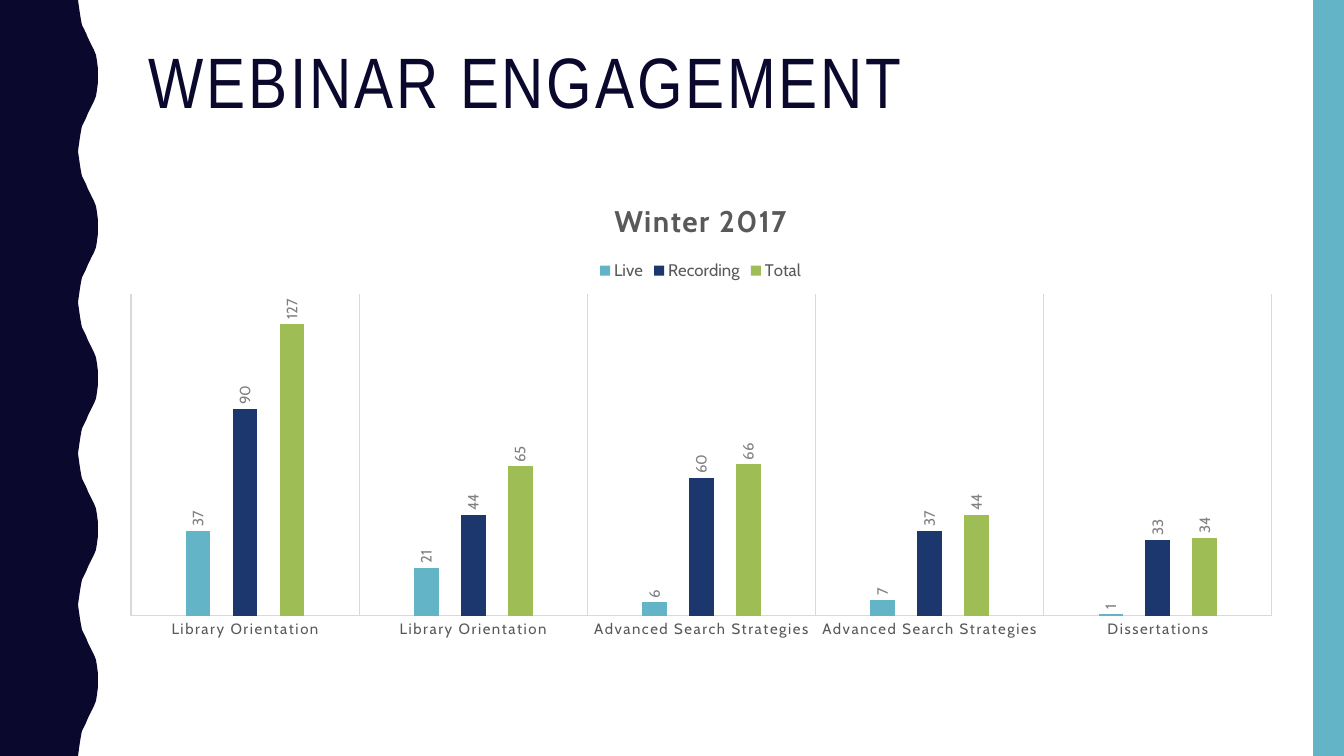
"""Build the webinar engagement slide with its clustered column chart."""
from lxml.etree import SubElement
from pptx import Presentation
from pptx.chart.data import CategoryChartData
from pptx.dml.color import RGBColor
from pptx.enum.chart import XL_CHART_TYPE, XL_LABEL_POSITION, XL_LEGEND_POSITION, XL_TICK_MARK
from pptx.enum.shapes import MSO_SHAPE
from pptx.enum.text import MSO_ANCHOR
from pptx.oxml.ns import qn
from pptx.util import Pt

NAVY = RGBColor(0x0B, 0x08, 0x2E)
TEAL = RGBColor(0x62, 0xB4, 0xC6)
BLUE = RGBColor(0x1B, 0x37, 0x6E)
GREEN = RGBColor(0x9E, 0xBE, 0x55)
DARK_GREY = RGBColor(0x59, 0x59, 0x59)
MID_GREY = RGBColor(0x80, 0x80, 0x80)
LIGHT_GREY = RGBColor(0xD9, 0xD9, 0xD9)

TITLE = "WEBINAR ENGAGEMENT"
CHART_TITLE = "Winter 2017"
WEBINARS = ["Library Orientation", "Library Orientation", "Advanced Search Strategies",
            "Advanced Search Strategies", "Dissertations"]
VIEWS = [
    ("Live", (37, 21, 6, 7, 1), TEAL),
    ("Recording", (90, 44, 60, 37, 33), BLUE),
    ("Total", (127, 65, 66, 44, 34), GREEN),
]

WIDTH, HEIGHT = 1344, 756
SCALE = 12192000 / WIDTH
TITLE_BOX = (139, 42, 1122, 164)
STRIPE_BOX = (1313, 0, 31, HEIGHT)
CHART_BOX = (107, 181, 1187, 468)
PLOT_BOX = (131, 294, 1141, 322)
WAVE_COUNT = 5
HALF_WAVE = [(78, 0), (79, 7), (80, 14), (81, 20), (82, 25), (84, 29), (86, 33), (88, 38),
             (90, 42), (92, 46), (94, 50), (96, 55), (97, 61), (98, 69)]


def emu(*lengths):
    """Turn px into EMU."""
    return [round(length * SCALE) for length in lengths]


def style(font, color, spacing=0, **values):
    """Set colour, letter spacing, kerning and the given attributes of a font."""
    for name, value in values.items():
        setattr(font, name, value)
    font.color.rgb = color
    for name, value in {"spc": spacing, "kern": 1200}.items():
        font._rPr.set(name, str(value))


def paint(shape, color):
    """Give a shape a plain fill with no outline or shadow."""
    shape.fill.solid()
    shape.fill.fore_color.rgb = color
    shape.line.fill.background()
    shape.shadow.inherit = False


def add_wave(page):
    """Draw the wavy band on the left."""
    period = HEIGHT / WAVE_COUNT
    crest = [(98, period / 2)]
    wave = HALF_WAVE + crest + [(x, period - y) for x, y in reversed(HALF_WAVE)]
    edge = [(x, y + period * index) for index in range(WAVE_COUNT) for x, y in wave]
    builder = page.shapes.build_freeform(0, 0)
    builder.add_line_segments([emu(*point) for point in edge + [(0, HEIGHT)]])
    paint(builder.convert_to_shape(), NAVY)


def add_title(page):
    """Write the slide title."""
    frame = page.shapes.add_textbox(*emu(*TITLE_BOX)).text_frame
    frame.word_wrap = True
    frame.vertical_anchor = MSO_ANCHOR.TOP
    para = frame.paragraphs[0]
    para.line_spacing = 0.9
    span = para.add_run()
    span.text = TITLE
    style(span.font, NAVY, 200, name="Arial Narrow", size=Pt(51))


def place_plot(chart):
    """Fix the inner plot area as fractions of the chart box."""
    area = chart._chartSpace.chart.plotArea
    for old in area.findall(qn("c:layout")):
        area.remove(old)
    layout = SubElement(area, qn("c:layout"))
    area.insert(0, layout)
    manual = SubElement(layout, qn("c:manualLayout"))
    left, top, width, height = CHART_BOX
    x, y, w, h = PLOT_BOX
    values = {"layoutTarget": "inner", "xMode": "edge", "yMode": "edge",
              "x": (x - left) / width, "y": (y - top) / height, "w": w / width, "h": h / height}
    for name, value in values.items():
        SubElement(manual, qn(f"c:{name}")).set("val", str(value))


def add_chart(page):
    """Add the column chart."""
    data = CategoryChartData()
    data.categories = WEBINARS
    for name, values, _ in VIEWS:
        data.add_series(name, values)
    chart = page.shapes.add_chart(XL_CHART_TYPE.COLUMN_CLUSTERED, *emu(*CHART_BOX), data).chart
    style(chart.font, DARK_GREY, name="Cabin", size=Pt(10))

    chart.has_title = True
    para = chart.chart_title.text_frame.paragraphs[0]
    span = para.add_run()
    span.text = CHART_TITLE
    style(span.font, DARK_GREY, 120, name="Cabin", size=Pt(21.28), bold=True)
    chart.chart_title.include_in_layout = False

    chart.has_legend = True
    chart.legend.position = XL_LEGEND_POSITION.TOP
    chart.legend.include_in_layout = False
    style(chart.legend.font, DARK_GREY, name="Cabin", size=Pt(12))

    axis = chart.category_axis
    axis.major_tick_mark = axis.minor_tick_mark = XL_TICK_MARK.NONE
    axis.has_major_gridlines = True
    for line in (axis.format.line, axis.major_gridlines.format.line):
        line.color.rgb = LIGHT_GREY
        line.width = Pt(0.75)
    style(axis.tick_labels.font, DARK_GREY, 120, name="Cabin", size=Pt(10.64))

    scale = {"visible": False, "has_major_gridlines": False, "minimum_scale": 0, "maximum_scale": 140}
    for name, value in scale.items():
        setattr(chart.value_axis, name, value)

    plot = chart.plots[0]
    for name, value in {"gap_width": 444, "overlap": -90, "vary_by_categories": False}.items():
        setattr(plot, name, value)
    for series, (_, _, color) in zip(plot.series, VIEWS):
        series.format.fill.solid()
        series.format.fill.fore_color.rgb = color
        labels = series.data_labels
        labels.show_value = True
        labels.position = XL_LABEL_POSITION.OUTSIDE_END
        style(labels.font, MID_GREY, name="Cabin", size=Pt(10.64))
        body = labels._element.find(qn("c:txPr")).find(qn("a:bodyPr"))
        body.set("rot", "-5400000")
        body.set("vert", "horz")
    place_plot(chart)


def main():
    """Build and save the deck."""
    deck = Presentation()
    deck.slide_width, deck.slide_height = emu(WIDTH, HEIGHT)
    page = deck.slides.add_slide(deck.slide_layouts[6])
    add_wave(page)
    paint(page.shapes.add_shape(MSO_SHAPE.RECTANGLE, *emu(*STRIPE_BOX)), TEAL)
    add_title(page)
    add_chart(page)
    deck.save("out.pptx")


if __name__ == "__main__":
    main()
